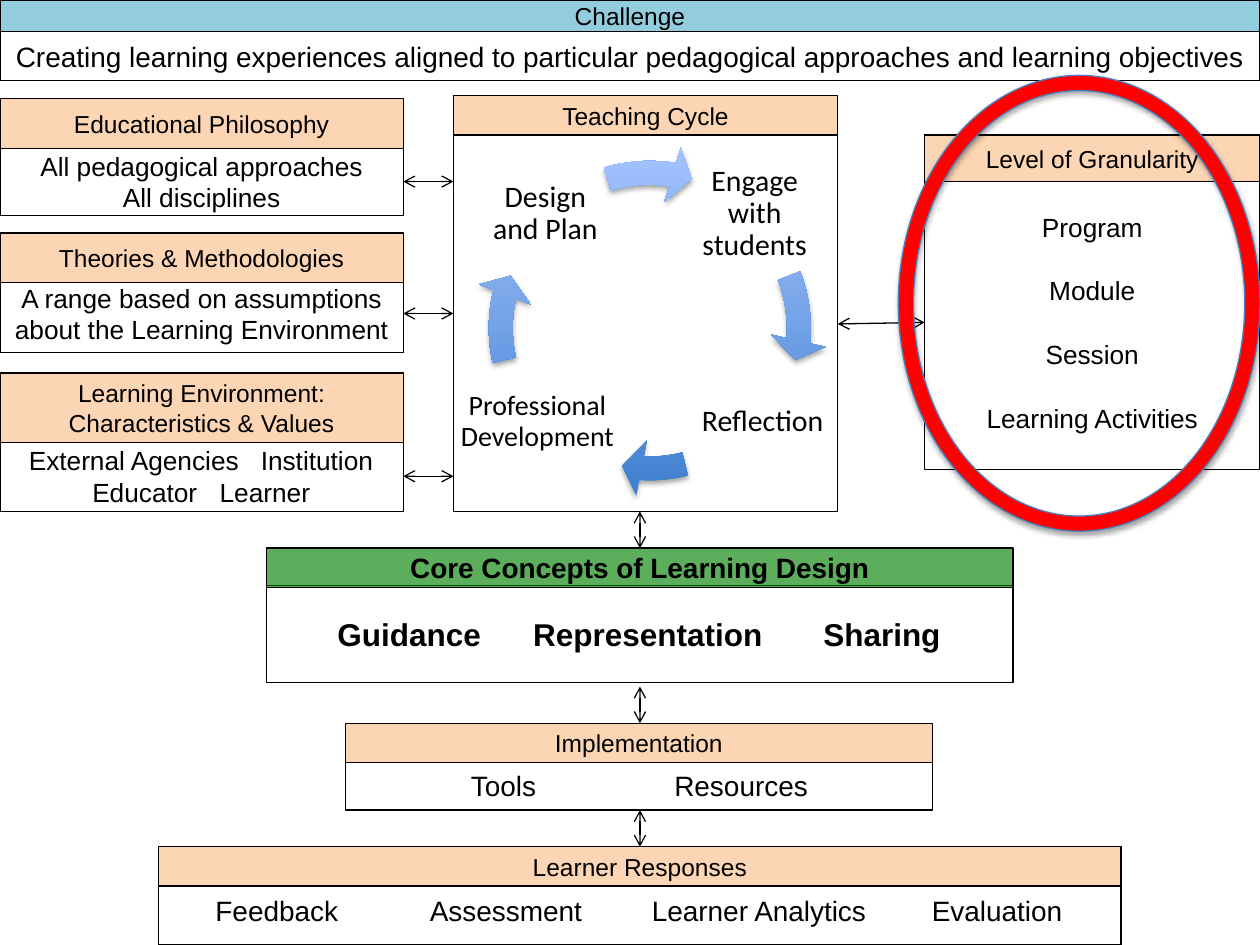
from lxml import etree
from pptx import Presentation
from pptx import util as u
from pptx.dml import color
from pptx.enum import shapes, text
from pptx.oxml import ns

HUES = {"ink": "000000", "sky": "93CDDD", "peach": "FCD5B5", "green": "008000",
        "red": "FF0000", "edge": "4B7EBC", "deep": "3F7FCE", "pale": "A4C4FF"}

PANELS = [
    dict(x=9.14, w=7.75, head=(1.93, 0.79), body=(2.72, 7.59), title="Teaching Cycle"),
    dict(x=0, w=25.4, head=(0, 0.64), body=(0.64, 0.99), title="Challenge", size=16,
         lines=["Creating learning experiences aligned to particular pedagogical "
                "approaches and learning objectives"], hue="sky"),
    dict(x=0, w=8.13, head=(1.98, 1.02), body=(2.97, 1.37), title="Educational Philosophy",
         lines=["All pedagogical approaches", "All disciplines"]),
    dict(x=0, w=8.13, head=(4.7, 0.99), body=(5.54, 1.57), title="Theories & Methodologies",
         lines=["A range based on assumptions about the Learning Environment"]),
    dict(x=0, w=8.13, head=(7.52, 1.4), body=(8.89, 1.42),
         title="Learning Environment:\nCharacteristics & Values",
         lines=[[("External Agencies", 2.7), ("Institution", 6.39)],
                [("Educator", 2.92), ("Learner", 5.34)]]),
    dict(x=18.64, w=6.76, head=(2.72, 0.94), body=(3.53, 5.94), title="Level of Granularity",
         lines=["Program", "Module", "Session", "Learning Activities"], gap=18.5),
    dict(x=5.38, w=15.04, head=(11.05, 0.79), body=(11.81, 1.95),
         title="Core Concepts of Learning Design", hue="green", alpha=64, bold=True,
         lines=[[("Guidance", 8.25), ("Representation", 13.06), ("Sharing", 17.78)]],
         size=18, top=16),
    dict(x=6.96, w=11.84, head=(14.58, 0.79), body=(15.34, 0.99), title="Implementation",
         lines=[[("Tools", 10.15), ("Resources", 14.94)]], size=16),
    dict(x=3.2, w=19.4, head=(17.07, 0.79), body=(17.65, 1.4), title="Learner Responses",
         lines=[[("Feedback", 5.58), ("Assessment", 10.2), ("Learner Analytics", 15.3),
                 ("Evaluation", 20.1)]], size=16),
]

STEPS = [("Engage with students", 13.97, 3.07, 2.49, 17),
         ("Reflection", 13.84, 7.26, 3.07, 17),
         ("Professional Development", 9.12, 7.26, 3.43, 16),
         ("Design and Plan", 9.75, 3.07, 2.49, 17)]

TURNS = [(9.68, 3.12, 2.995, 203.329), (9.6, 3.02, 55.886, 45.466),
         (9.53, 3.12, 116.014, 100.347), (9.6, 2.92, 167.476, 151.866)]

LINKS = [(8.13, y, 9.14, y) for y in (3.66, 6.32, 9.6)]
LINKS += [(12.9, y, 12.9, y + 0.74) for y in (10.31, 13.84, 16.33)]
LINKS += [(18.64, 6.5, 16.89, 6.53)]


def rgb(hue):
    return color.RGBColor.from_string(HUES[hue])


def add(parent, tag, **attrs):
    return etree.SubElement(parent, ns.qn(tag), attrs)


def style(para, size, font="Arial", bold=False):
    para.alignment = text.PP_ALIGN.CENTER
    for run in para.runs:
        run.font.size = u.Pt(size)
        run.font.name = font
        run.font.bold = bold
        run.font.color.rgb = rgb("ink")


def shape(slide, kind, x, y, w, h, hue=None, line="ink"):
    item = slide.shapes.add_shape(kind, u.Cm(x), u.Cm(y), u.Cm(w), u.Cm(h))
    item.shadow.inherit = False
    if hue:
        item.fill.solid()
        item.fill.fore_color.rgb = rgb(hue)
    else:
        item.fill.background()
    if line:
        item.line.color.rgb = rgb(line)
        item.line.width = u.Pt(0.75)
    else:
        item.line.fill.background()
    return item


def shade(item):
    effects = item._element.spPr.find(ns.qn("a:effectLst"))
    drop = add(effects, "a:outerShdw", blurRad=str(u.Pt(3.1)), dist=str(u.Pt(1.8)),
               dir="5400000", rotWithShape="0")
    tint = add(drop, "a:srgbClr", val=HUES["ink"])
    add(tint, "a:alpha", val="35000")


def spread(para, cells, left):
    para.text = "".join("\t" + word for word, _ in cells)
    tabs = add(para._p.get_or_add_pPr(), "a:tabLst")
    for _, mid in cells:
        add(tabs, "a:tab", pos=str(u.Cm(mid - left)), algn="ctr")


def panel(slide, x, w, head, body, title, lines=(), size=15, hue="peach",
          alpha=None, bold=False, gap=0, top=None):
    box = shape(slide, shapes.MSO_SHAPE.RECTANGLE, x, body[0], w, body[1])
    frame = box.text_frame
    frame.word_wrap = True
    frame.vertical_anchor = text.MSO_ANCHOR.MIDDLE
    for i, line in enumerate(lines):
        para = frame.add_paragraph() if i else frame.paragraphs[0]
        if isinstance(line, str):
            para.text = line
        else:
            spread(para, line, x + 0.25)
        style(para, size, bold=bold)
        if not isinstance(line, str):
            para.alignment = text.PP_ALIGN.LEFT
        if i and gap:
            para.space_before = u.Pt(gap)

    bar = shape(slide, shapes.MSO_SHAPE.RECTANGLE, x, head[0], w, head[1], hue)
    if alpha:
        tint = bar._element.spPr.find(ns.qn("a:solidFill"))[0]
        add(tint, "a:alpha", val=str(alpha * 1000))
    bar.text_frame.text = title
    bar.text_frame.word_wrap = False
    bar.text_frame.vertical_anchor = text.MSO_ANCHOR.MIDDLE
    for para in bar.text_frame.paragraphs:
        style(para, top or 14, bold=bold)


def step(slide, label, x, y, w, size):
    box = slide.shapes.add_textbox(u.Cm(x), u.Cm(y), u.Cm(w), u.Cm(2.49))
    frame = box.text_frame
    frame.text = label
    frame.word_wrap = True
    frame.vertical_anchor = text.MSO_ANCHOR.MIDDLE
    frame.margin_left = frame.margin_right = u.Cm(0.05)
    frame.margin_top = frame.margin_bottom = u.Cm(0.05)
    style(frame.paragraphs[0], size, "Calibri")
    frame.paragraphs[0].line_spacing = 0.9


def turn(slide, x, y, end, start):
    item = shape(slide, shapes.MSO_SHAPE.CIRCULAR_ARROW, x, y, 6.99, 6.99, line=None)
    for i, value in enumerate((0.069, 4.658, end, start, 0.081)):
        item.adjustments[i] = value
    item.fill.gradient()
    item.fill.gradient_angle = 90
    for stop, hue in zip(item.fill.gradient_stops, ("deep", "pale")):
        stop.color.rgb = rgb(hue)
    shade(item)


def link(slide, *ends):
    item = slide.shapes.add_connector(shapes.MSO_CONNECTOR.STRAIGHT, *map(u.Cm, ends))
    item.line.color.rgb = rgb("ink")
    item.line.width = u.Pt(0.75)
    edge = item.line._get_or_add_ln()
    add(edge, "a:headEnd", type="arrow")
    add(edge, "a:tailEnd", type="arrow")
    add(item._element.spPr, "a:effectLst")


def ring(slide):
    item = shape(slide, shapes.MSO_SHAPE.DONUT, 18.11, 1.52, 7.29, 9.19, "red", "edge")
    item.adjustments[0] = 0.042
    shade(item)


def main():
    deck = Presentation()
    deck.slide_width, deck.slide_height = u.Cm(25.4), u.Cm(19.05)
    slide = deck.slides.add_slide(deck.slide_layouts[6])
    for label, arc in zip(STEPS, TURNS):
        step(slide, *label)
        turn(slide, *arc)
    for part in PANELS:
        panel(slide, **part)
    for ends in LINKS:
        link(slide, *ends)
    ring(slide)
    deck.save("out.pptx")


if __name__ == "__main__":
    main()
